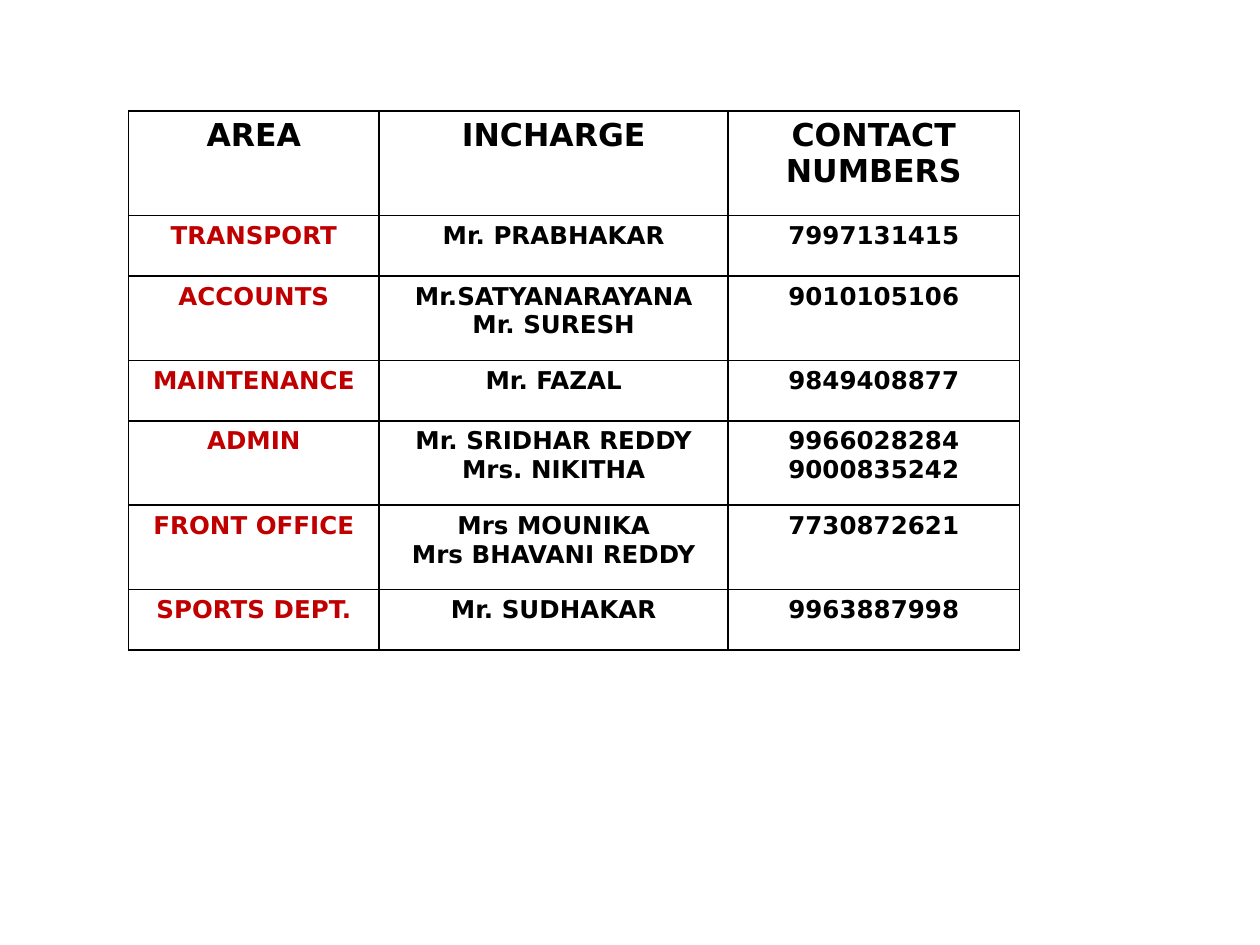
from dataclasses import dataclass

from lxml import etree
from pptx import Presentation
from pptx.dml.color import RGBColor
from pptx.enum.text import MSO_ANCHOR, PP_ALIGN
from pptx.oxml.ns import qn
from pptx.util import Inches, Pt

CENTER = PP_ALIGN.CENTER
TOP = MSO_ANCHOR.TOP
SLIDE_WIDTH, SLIDE_HEIGHT = Inches(10), Inches(7.5)
BLANK_LAYOUT = 6
TABLE_LEFT, TABLE_TOP = Inches(1.02), Inches(0.88)
COLUMN_WIDTHS = [Inches(1.99), Inches(2.77), Inches(2.31)]
HEADING_HEIGHT = Inches(0.83)
ENTRY_HEIGHTS = {1: Inches(0.48), 2: Inches(0.67)}
BORDER_SIDES = ("a:lnL", "a:lnR", "a:lnT", "a:lnB")


@dataclass(frozen=True)
class Theme:
    font: str = "DejaVu Sans"
    ink: str = "000000"
    area: str = "C00000"
    heading_size: int = 18
    entry_size: int = 14
    border_width: int = 1


THEME = Theme()
HEADINGS = ["AREA", "INCHARGE", "CONTACT NUMBERS"]
CONTACTS = [
    ["TRANSPORT", "Mr. PRABHAKAR", "7997131415"],
    ["ACCOUNTS", "Mr.SATYANARAYANA\nMr. SURESH", "9010105106"],
    ["MAINTENANCE", "Mr. FAZAL", "9849408877"],
    ["ADMIN", "Mr. SRIDHAR REDDY\nMrs. NIKITHA", "9966028284\n9000835242"],
    ["FRONT OFFICE", "Mrs MOUNIKA\nMrs BHAVANI REDDY", "7730872621"],
    ["SPORTS DEPT.", "Mr. SUDHAKAR", "9963887998"],
]


def entry_height(entry):
    return ENTRY_HEIGHTS[max(len(text.splitlines()) for text in entry)]


def add_borders(cell):
    properties = cell._tc.get_or_add_tcPr()
    for side in BORDER_SIDES:
        border = etree.SubElement(properties, qn(side), w=str(Pt(THEME.border_width)))
        fill = etree.SubElement(border, qn("a:solidFill"))
        etree.SubElement(fill, qn("a:srgbClr"), val=THEME.ink)


def write_cell(cell, text, size, color):
    add_borders(cell)
    cell.fill.background()
    cell.vertical_anchor = TOP
    cell.text = text
    font_format = {"name": THEME.font, "size": Pt(size), "bold": True}
    for paragraph in cell.text_frame.paragraphs:
        paragraph.alignment = CENTER
        for run in paragraph.runs:
            for attribute, value in font_format.items():
                setattr(run.font, attribute, value)
            run.font.color.rgb = RGBColor.from_string(color)


def add_contact_table(slide):
    heights = [HEADING_HEIGHT] + [entry_height(entry) for entry in CONTACTS]
    table = slide.shapes.add_table(
        len(heights), len(HEADINGS), TABLE_LEFT, TABLE_TOP,
        sum(COLUMN_WIDTHS), sum(heights),
    ).table
    for column, width in zip(table.columns, COLUMN_WIDTHS):
        column.width = width
    for row, height in zip(table.rows, heights):
        row.height = height
    for column, heading in enumerate(HEADINGS):
        write_cell(table.cell(0, column), heading, THEME.heading_size, THEME.ink)
    for row, entry in enumerate(CONTACTS, start=1):
        for column, text in enumerate(entry):
            color = THEME.area if column == 0 else THEME.ink
            write_cell(table.cell(row, column), text, THEME.entry_size, color)


def main():
    presentation = Presentation()
    presentation.slide_width = SLIDE_WIDTH
    presentation.slide_height = SLIDE_HEIGHT
    slide = presentation.slides.add_slide(presentation.slide_layouts[BLANK_LAYOUT])
    add_contact_table(slide)
    presentation.save("out.pptx")


if __name__ == "__main__":
    main()
